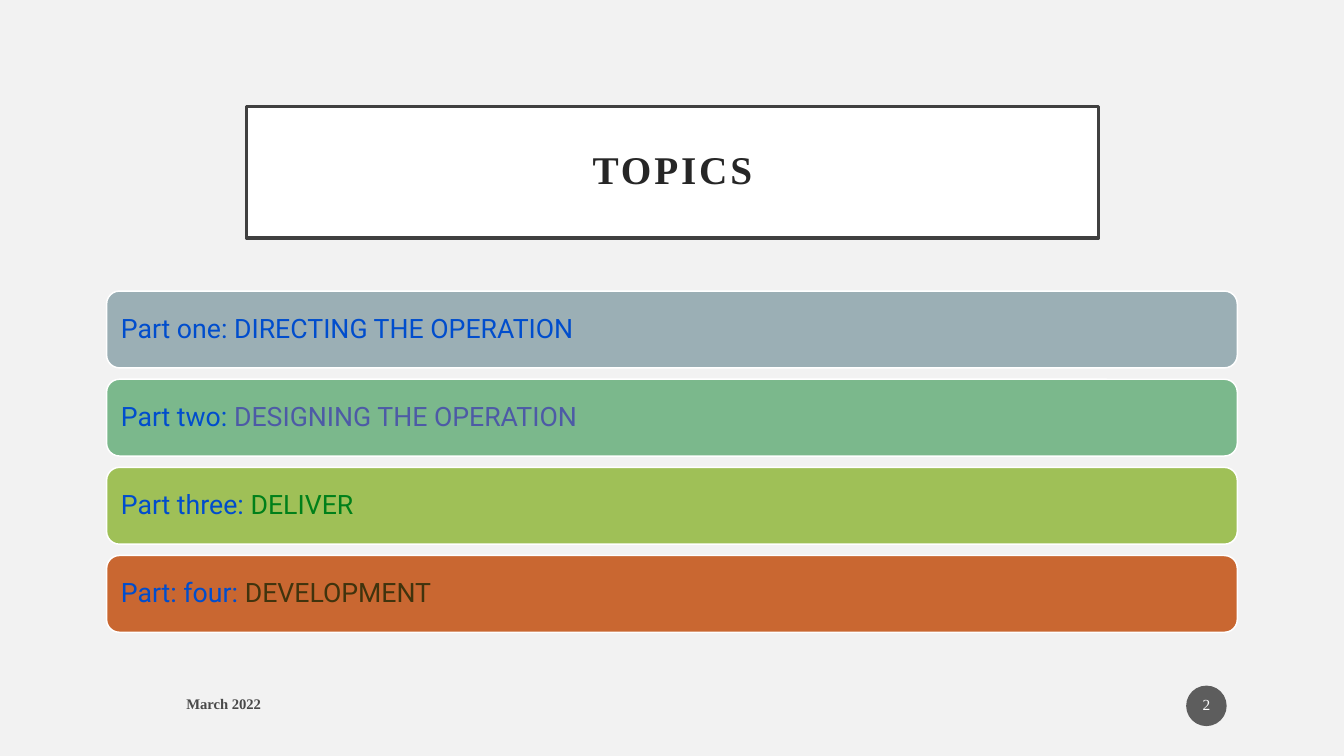
from dataclasses import dataclass

import pptx
import pptx.util
import pptx.dml.color
import pptx.enum.shapes
import pptx.enum.text

Inches = pptx.util.Inches
SHAPE = pptx.enum.shapes.MSO_SHAPE
ALIGN = pptx.enum.text.PP_ALIGN


@dataclass(frozen=True)
class Theme:
    background: str = "F2F2F2"
    white: str = "FFFFFF"
    title_line: str = "404040"
    title_text: str = "262626"
    badge: str = "5D5D5D"
    date: str = "494949"
    label: str = "004DCD"
    serif: str = "Times New Roman"
    sans: str = "Roboto"
    title_size: float = 26.5
    topic_size: float = 18
    badge_size: float = 10.4
    date_size: float = 9.9


THEME = Theme()

# Label, topic, bar fill, topic colour
TOPICS = [
    ("Part one: ", "DIRECTING THE OPERATION", "9BAFB5", THEME.label),
    ("Part two: ", "DESIGNING THE OPERATION", "7BB88C", "4D5AA6"),
    ("Part three: ", "DELIVER", "9FC057", "00801A"),
    ("Part: four: ", "DEVELOPMENT", "C96731", "40330D"),
]
BAR_TOP, BAR_BOTTOM, BAR_HEIGHT = 2.73, 5.93, 0.72
BAR_PITCH = (BAR_BOTTOM - BAR_HEIGHT - BAR_TOP) / (len(TOPICS) - 1)


def rgb(color):
    return pptx.dml.color.RGBColor.from_string(color)


def style_run(r, font, size, color, bold=False):
    r.font.name = font
    r.font.size = pptx.util.Pt(size)
    r.font.color.rgb = rgb(color)
    r.font.bold = bold


def set_frame(sp, inset_x, inset_y):
    tf = sp.text_frame
    tf.word_wrap = True
    tf.vertical_anchor = pptx.enum.text.MSO_ANCHOR.MIDDLE
    tf.margin_left = tf.margin_right = Inches(inset_x)
    tf.margin_top = tf.margin_bottom = Inches(inset_y)
    return tf


def set_text(tf, text, align, line_spacing=None):
    tf.text = text
    p = tf.paragraphs[0]
    p.alignment = align
    p.line_spacing = line_spacing
    return p


def add_box(s, kind, box, fill, line=None, line_width=1):
    sp = s.shapes.add_shape(kind, *map(Inches, box))
    sp.shadow.inherit = False
    sp.fill.solid()
    sp.fill.fore_color.rgb = rgb(fill)
    if line:
        sp.line.color.rgb = rgb(line)
        sp.line.width = pptx.util.Pt(line_width)
    else:
        sp.line.fill.background()
    return sp


def add_title(s, text):
    sp = add_box(s, SHAPE.RECTANGLE, (2.31, 1, 7.99, 1.23),
                 THEME.white, THEME.title_line, 2.5)
    p = set_text(set_frame(sp, 0.2, 0.2), text, ALIGN.CENTER, 0.9)
    r = p.runs[0]
    style_run(r, THEME.serif, THEME.title_size, THEME.title_text, True)
    r.font._element.set("spc", "190")


def add_topic(s, top, label, topic, fill, color):
    sp = add_box(s, SHAPE.ROUNDED_RECTANGLE, (1, top, 10.6, BAR_HEIGHT),
                 fill, THEME.white)
    p = set_text(set_frame(sp, 0.1, 0.07), label, ALIGN.LEFT, 0.9)
    style_run(p.runs[0], THEME.sans, THEME.topic_size, THEME.label)
    r = p.add_run()
    r.text = topic
    style_run(r, THEME.sans, THEME.topic_size, color)


def add_date(s, text):
    sp = s.shapes.add_textbox(*map(Inches, (1.65, 6.43, 6.1, 0.33)))
    p = set_text(set_frame(sp, 0.1, 0.05), text, ALIGN.LEFT)
    style_run(p.runs[0], THEME.serif, THEME.date_size, THEME.date, True)


def add_page_badge(s, text):
    sp = add_box(s, SHAPE.OVAL, (11.12, 6.43, 0.38, 0.38), THEME.badge)
    p = set_text(set_frame(sp, 0.02, 0.05), text, ALIGN.CENTER, 0.9)
    style_run(p.runs[0], THEME.serif, THEME.badge_size, THEME.white)


def main():
    prs = pptx.Presentation()
    prs.slide_width, prs.slide_height = Inches(12.6), Inches(7.09)
    s = prs.slides.add_slide(prs.slide_layouts[6])
    s.background.fill.solid()
    s.background.fill.fore_color.rgb = rgb(THEME.background)

    # Title
    add_title(s, "TOPICS")

    # Topic bars
    for i, topic in enumerate(TOPICS):
        add_topic(s, BAR_TOP + i * BAR_PITCH, *topic)

    # Footer
    add_date(s, "March 2022")
    add_page_badge(s, "2")

    prs.save("out.pptx")


if __name__ == "__main__":
    main()
